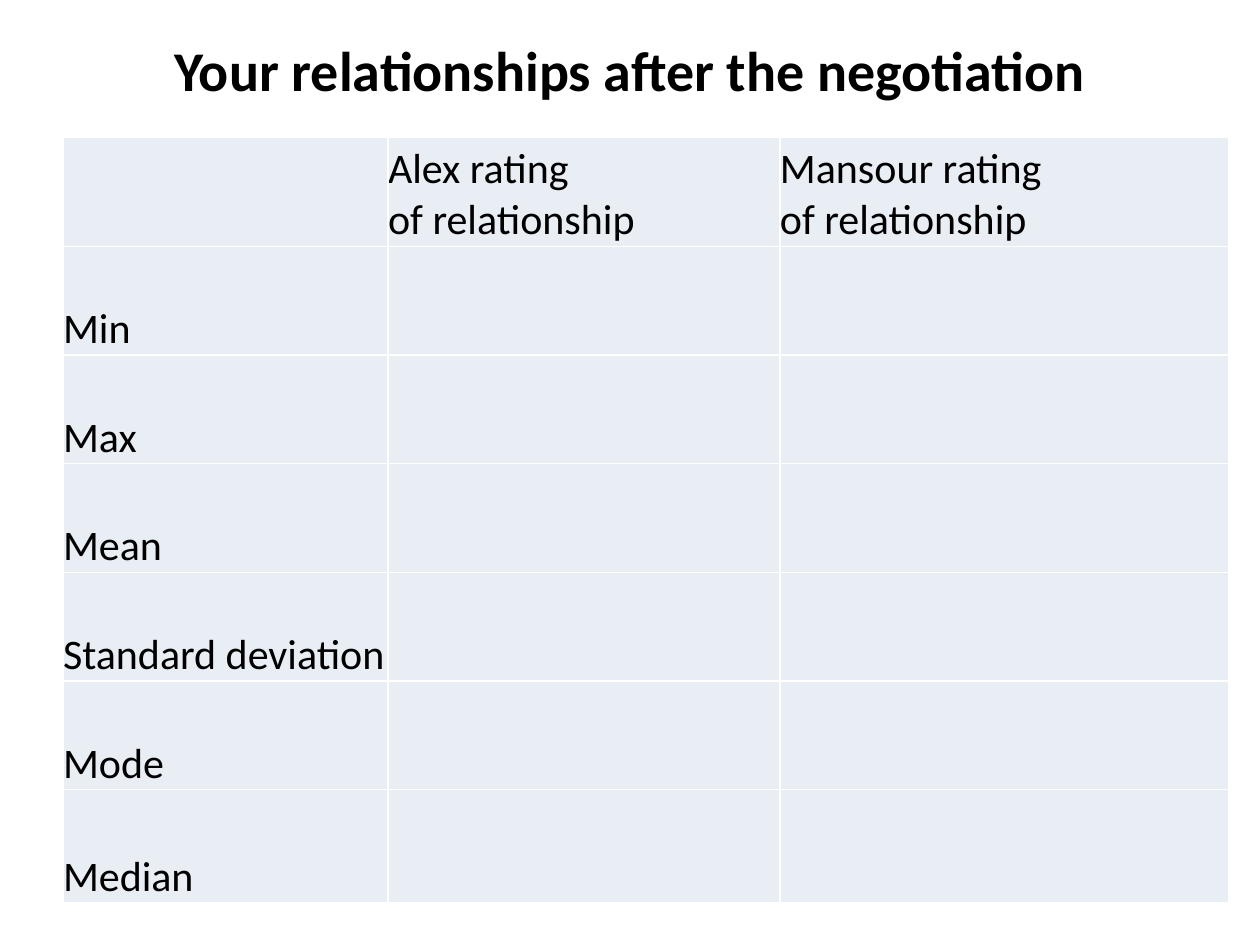
"""Build a slide with an empty statistics table for two relationship ratings."""
from dataclasses import dataclass
from typing import Optional

from lxml.etree import SubElement
from pptx import Presentation
from pptx.dml.color import RGBColor as Color
from pptx.enum.text import MSO_ANCHOR as Anchor, PP_ALIGN as Align
from pptx.oxml.ns import qn
from pptx.util import Pt


@dataclass(frozen=True)
class Theme:
    font: str = "Calibri"
    ink: str = "000000"
    cell: str = "E9EDF4"
    border: str = "FFFFFF"
    border_width: float = 1
    title_size: float = 32
    cell_size: float = 24


@dataclass(frozen=True)
class Area:
    left: float
    top: float
    width: float
    height: float

    def lengths(self) -> tuple:
        return Pt(self.left), Pt(self.top), Pt(self.width), Pt(self.height)


THEME = Theme()
TITLE_AREA = Area(36, -5.76, 648, 90)
COLUMN_WIDTHS = (185.76, 223.92, 256.32)
ROW_HEIGHTS = (62.1,) * 6 + (64.5,)
TABLE_AREA = Area(36, 78.7, sum(COLUMN_WIDTHS), sum(ROW_HEIGHTS))
RATERS = ("Alex", "Mansour")
STATISTICS = ("Min", "Max", "Mean", "Standard deviation", "Mode", "Median")


def add_text(para, text: str, size: float, bold: bool = False) -> None:
    span = para.add_run()
    span.text = text
    span.font.name = THEME.font
    span.font.size = Pt(size)
    span.font.bold = bold
    span.font.color.rgb = Color.from_string(THEME.ink)


def add_title(page, area: Area, text: str) -> None:
    frame = page.shapes.add_textbox(*area.lengths()).text_frame
    frame.word_wrap = True
    frame.vertical_anchor = Anchor.MIDDLE
    para = frame.paragraphs[0]
    para.alignment = Align.CENTER
    add_text(para, text, THEME.title_size, bold=True)


def style_cell(cell) -> None:
    properties = cell._tc.get_or_add_tcPr()
    for side in ("lnL", "lnR", "lnT", "lnB"):
        line = SubElement(properties, qn(f"a:{side}"), w=str(Pt(THEME.border_width)))
        fill = SubElement(line, qn("a:solidFill"))
        SubElement(fill, qn("a:srgbClr"), val=THEME.border)
    cell.fill.solid()
    cell.fill.fore_color.rgb = Color.from_string(THEME.cell)


def write_cell(cell, lines: tuple) -> None:
    cell.margin_left = cell.margin_right = cell.margin_top = cell.margin_bottom = 0
    cell.vertical_anchor = Anchor.BOTTOM
    frame = cell.text_frame
    for index, text in enumerate(lines):
        para = frame.add_paragraph() if index else frame.paragraphs[0]
        add_text(para, text, THEME.cell_size)


def cell_lines(row: int, column: int) -> Optional[tuple]:
    if row == 0 and column > 0:
        return f"{RATERS[column - 1]} rating", "of relationship"
    if row > 0 and column == 0:
        return (STATISTICS[row - 1],)
    return None


def add_ratings_table(page, area: Area) -> None:
    table = page.shapes.add_table(
        len(ROW_HEIGHTS), len(COLUMN_WIDTHS), *area.lengths()
    ).table
    table.first_row = table.horz_banding = False
    for column, width in zip(table.columns, COLUMN_WIDTHS):
        column.width = Pt(width)
    for row, height in enumerate(ROW_HEIGHTS):
        table.rows[row].height = Pt(height)
        for column in range(len(COLUMN_WIDTHS)):
            cell = table.cell(row, column)
            style_cell(cell)
            lines = cell_lines(row, column)
            if lines:
                write_cell(cell, lines)


def main() -> None:
    deck = Presentation()
    deck.slide_width, deck.slide_height = Pt(720), Pt(540)
    page = deck.slides.add_slide(deck.slide_layouts[6])
    add_title(page, TITLE_AREA, "Your relationships after the negotiation")
    add_ratings_table(page, TABLE_AREA)
    deck.save("out.pptx")


if __name__ == "__main__":
    main()
